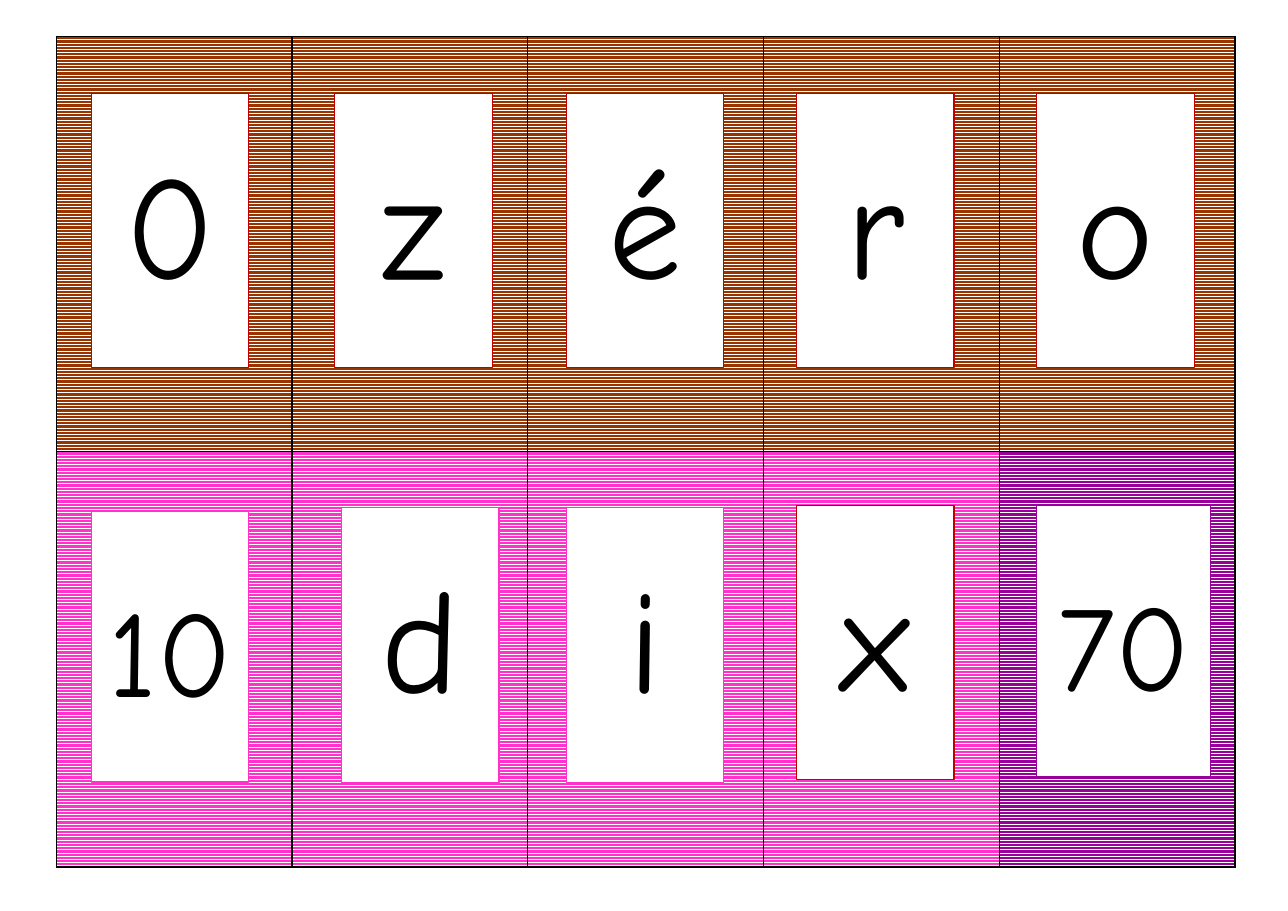
from lxml import etree
from pptx import Presentation
from pptx import util as u
from pptx.dml.color import RGBColor
from pptx.enum import dml, shapes, text
from pptx.oxml.ns import qn

BROWN = RGBColor(0x99, 0x33, 0x00)
PINK = RGBColor(0xFF, 0x33, 0xCC)
PURPLE = RGBColor(0x99, 0x00, 0x99)
RED = RGBColor(0xC0, 0x00, 0x00)
WHITE = RGBColor(0xFF, 0xFF, 0xFF)
BLACK = RGBColor(0x00, 0x00, 0x00)

# Card styles: width, height, text size, top inset
LETTER = (1.43, 2.49, 96, 0.35)
TEN = (1.43, 2.46, 80, 0.58)
SEVENTY = (1.58, 2.46, 80, 0.58)

# Rows of cards: text, cell colour, outline, offset in the cell, style
CARDS = [
    [("0", BROWN, RED, (0.32, 0.52), LETTER),
     ("z", BROWN, RED, (0.39, 0.52), LETTER),
     ("é", BROWN, RED, (0.35, 0.52), LETTER),
     ("r", BROWN, RED, (0.30, 0.52), LETTER),
     ("o", BROWN, RED, (0.34, 0.52), LETTER)],
    [("10", PINK, PINK, (0.32, 0.54), TEN),
     ("d", PINK, PINK, (0.45, 0.51), LETTER),
     ("i", PINK, PINK, (0.35, 0.51), LETTER),
     ("x", PINK, RED, (0.30, 0.49), LETTER),
     ("70", PURPLE, PURPLE, (0.34, 0.49), SEVENTY)],
]
LEFT, TOP = 0.51, 0.33
CELL_W, CELL_H = 2.14, 3.77
FONT = {"name": "Comic Neue", "bold": False}


def set_cell(cell, color):
    """Zigzag fill and a thin black border on every side."""
    cell.fill.patterned()
    cell.fill.pattern = dml.MSO_PATTERN.ZIG_ZAG
    cell.fill.fore_color.rgb = WHITE
    cell.fill.back_color.rgb = color
    props = cell._tc.get_or_add_tcPr()
    for i, side in enumerate(("lnL", "lnR", "lnT", "lnB")):
        edge = etree.Element(qn("a:" + side), w=str(u.Pt(1)))
        fill = etree.SubElement(edge, qn("a:solidFill"))
        etree.SubElement(fill, qn("a:srgbClr"), val=str(BLACK))
        props.insert(i, edge)


def add_card(slide, row, col, label, line, offset, style):
    """White card with one large label, placed from its cell's corner."""
    wide, high, size, inset = style
    x = LEFT + col * CELL_W + offset[0]
    y = TOP + row * CELL_H + offset[1]
    card = slide.shapes.add_shape(
        shapes.MSO_SHAPE.RECTANGLE, *map(u.Inches, (x, y, wide, high)))
    card.shadow.inherit = False
    card.fill.solid()
    card.fill.fore_color.rgb = WHITE
    card.line.color.rgb = line
    card.line.width = u.Pt(0.75)

    frame = card.text_frame
    layout = {"word_wrap": True, "margin_top": u.Inches(inset),
              "vertical_anchor": text.MSO_ANCHOR.TOP}
    for name, value in layout.items():
        setattr(frame, name, value)
    para = frame.paragraphs[0]
    para.alignment = text.PP_ALIGN.CENTER
    run = para.add_run()
    run.text = label
    for name, value in {**FONT, "size": u.Pt(size)}.items():
        setattr(run.font, name, value)
    run.font.color.rgb = BLACK


def main():
    deck = Presentation()
    deck.slide_width, deck.slide_height = u.Inches(11.69), u.Inches(8.27)
    slide = deck.slides.add_slide(deck.slide_layouts[6])

    # Background grid
    rows, cols = len(CARDS), len(CARDS[0])
    box = (LEFT, TOP, cols * CELL_W, rows * CELL_H)
    grid = slide.shapes.add_table(rows, cols, *map(u.Inches, box)).table
    grid.first_row = grid.horz_banding = False
    for column in grid.columns:
        column.width = u.Inches(CELL_W)
    for line in grid.rows:
        line.height = u.Inches(CELL_H)

    # Cells and the card in each
    for r, cards in enumerate(CARDS):
        for c, (label, color, line, offset, style) in enumerate(cards):
            set_cell(grid.cell(r, c), color)
            add_card(slide, r, c, label, line, offset, style)

    deck.save("out.pptx")


if __name__ == "__main__":
    main()
